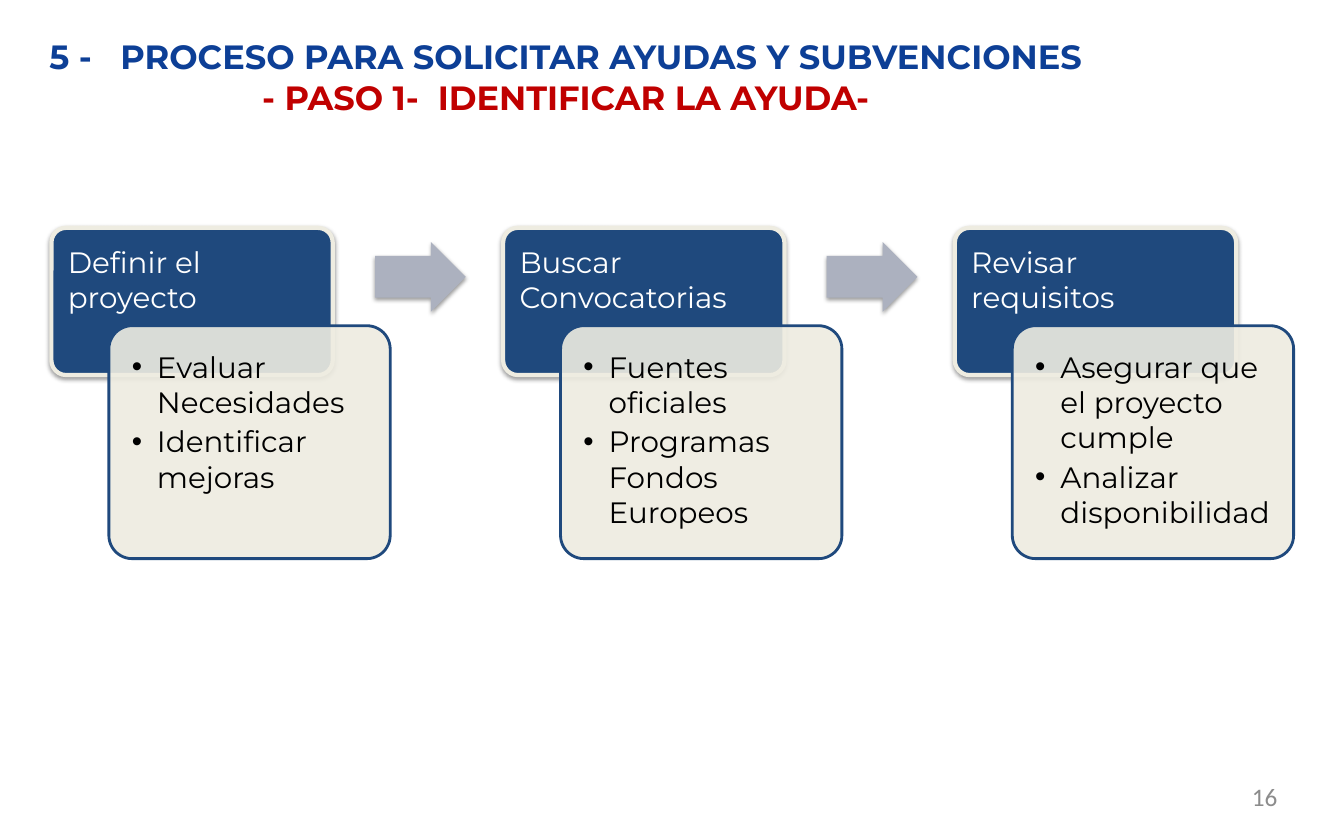
from dataclasses import dataclass

from lxml import etree
from pptx import Presentation
from pptx.dml.color import RGBColor
from pptx.enum.shapes import MSO_SHAPE
from pptx.enum.text import MSO_ANCHOR, PP_ALIGN
from pptx.oxml.ns import qn
from pptx.util import Emu, Pt

ROUND, ARROW = MSO_SHAPE.ROUNDED_RECTANGLE, MSO_SHAPE.RIGHT_ARROW
TOP = MSO_ANCHOR.TOP
LEFT, CENTER, RIGHT = PP_ALIGN.LEFT, PP_ALIGN.CENTER, PP_ALIGN.RIGHT
PX = 9144


@dataclass(frozen=True)
class Theme:
    """Colours, fonts and type sizes of the slide."""
    blue: str = "0D3F96"
    red: str = "C00000"
    navy: str = "1F497D"
    cream: str = "EEECE1"
    arrow: str = "ACB1BF"
    white: str = "FFFFFF"
    black: str = "000000"
    grey: str = "8C8C8C"
    font: str = "Montserrat"
    number_font: str = "Calibri"
    title_size: int = 24
    body_size: int = 21
    number_size: int = 18


THEME = Theme()
STEPS = [
    ("Definir el proyecto", ["Evaluar Necesidades", "Identificar mejoras"]),
    ("Buscar Convocatorias", ["Fuentes oficiales", "Programas Fondos Europeos"]),
    ("Revisar requisitos", ["Asegurar que el proyecto cumple", "Analizar disponibilidad"]),
]


def px(*values):
    """Turn px lengths into EMU."""
    return [Emu(v * PX) for v in values]


def add_xml(parent, tag, **attrs):
    """Append a drawing element with its attributes."""
    return etree.SubElement(parent, qn(tag), {k: str(v) for k, v in attrs.items()})


def set_frame(tf, x_inset, y_inset):
    """Set wrapping, top anchor and insets of a text frame."""
    left, top = px(x_inset, y_inset)
    values = {"word_wrap": True, "vertical_anchor": TOP, "margin_left": left,
              "margin_right": left, "margin_top": top, "margin_bottom": top}
    for name, value in values.items():
        setattr(tf, name, value)


def write(tf, lines, size, align=LEFT, font=THEME.font, bold=False, bullet=False):
    """Write (text, colour) lines as paragraphs."""
    for i, (text, color) in enumerate(lines):
        p = tf.add_paragraph() if i else tf.paragraphs[0]
        p.alignment = align
        if bullet:
            p.space_after = Pt(3)
            pPr = p._p.get_or_add_pPr()
            pPr.set("marL", str(25 * PX))
            pPr.set("indent", str(-25 * PX))
            add_xml(pPr, "a:buFont", typeface="Arial")
            add_xml(pPr, "a:buChar", char="•")
        r = p.add_run()
        r.text = text
        for name, value in {"name": font, "size": Pt(size), "bold": bold}.items():
            setattr(r.font, name, value)
        r.font.color.rgb = RGBColor.from_string(color)


def add_block(s, kind, box, adjustments, fill, line=None, width=0, alpha=100, shadow=False):
    """Add a filled preset shape with optional outline and shadow."""
    sp = s.shapes.add_shape(kind, *px(*box))
    for i, value in enumerate(adjustments):
        sp.adjustments[i] = value
    sp.fill.solid()
    sp.fill.fore_color.rgb = RGBColor.from_string(fill)
    if alpha < 100:
        color = sp.element.spPr.find(f"{qn('a:solidFill')}/{qn('a:srgbClr')}")
        add_xml(color, "a:alpha", val=alpha * 1000)
    if line:
        sp.line.color.rgb = RGBColor.from_string(line)
        sp.line.width = Pt(width)
    else:
        sp.line.fill.background()
    sp.shadow.inherit = False
    if shadow:
        effects = sp.element.spPr.find(qn("a:effectLst"))
        outer = add_xml(effects, "a:outerShdw", blurRad=Pt(3.1), dist=Pt(1.6),
                        dir=5400000, rotWithShape=0)
        add_xml(add_xml(outer, "a:srgbClr", val=THEME.black), "a:alpha", val=38000)
    return sp


def add_title(s, box):
    """Add the two-line slide title."""
    tf = s.shapes.add_textbox(*px(*box)).text_frame
    set_frame(tf, 10, 5)
    lines = [("5 -   PROCESO PARA SOLICITAR AYUDAS Y SUBVENCIONES", THEME.blue),
             ("- PASO 1-  IDENTIFICAR LA AYUDA-", THEME.red)]
    write(tf, lines, THEME.title_size, CENTER, bold=True)


def add_step(s, box, heading, items):
    """Add a heading block overlapped by its bulleted panel."""
    x, y, w, h = box
    head = add_block(s, ROUND, (x, y, w - 57, 146), [0.1], THEME.navy,
                     THEME.cream, 3, shadow=True)
    set_frame(head.text_frame, 12, 12)
    write(head.text_frame, [(heading, THEME.white)], THEME.body_size)
    panel = add_block(s, ROUND, (x + 57, y + 97, w - 57, h - 97), [0.1],
                      THEME.cream, THEME.navy, 2, alpha=90)
    set_frame(panel.text_frame, 16, 16)
    write(panel.text_frame, [(item, THEME.black) for item in items],
          THEME.body_size, bullet=True)


def add_process(s, box):
    """Spread the steps evenly over the box, with arrows between them."""
    x, y, w, h = box
    step_w = 336
    pitch = (w - step_w) // (len(STEPS) - 1)
    for i, (heading, items) in enumerate(STEPS):
        left = x + i * pitch
        if i:
            add_block(s, ARROW, (left - 127, y + 14, 90, 69), [0.6, 0.5],
                      THEME.arrow, shadow=True)
        add_step(s, (left, y, step_w, h), heading, items)


def add_number(s, box):
    """Add the slide number."""
    tf = s.shapes.add_textbox(*px(*box)).text_frame
    set_frame(tf, 0, 0)
    write(tf, [("16", THEME.grey)], THEME.number_size, RIGHT, THEME.number_font)


def main():
    """Build and save the slide."""
    prs = Presentation()
    prs.slide_width, prs.slide_height = px(1333, 833)
    s = prs.slides.add_slide(prs.slide_layouts[6])
    add_number(s, (960, 775, 307, 42))
    add_title(s, (1, 31, 1120, 91))
    add_process(s, (51, 226, 1232, 328))
    prs.save("out.pptx")


if __name__ == "__main__":
    main()
